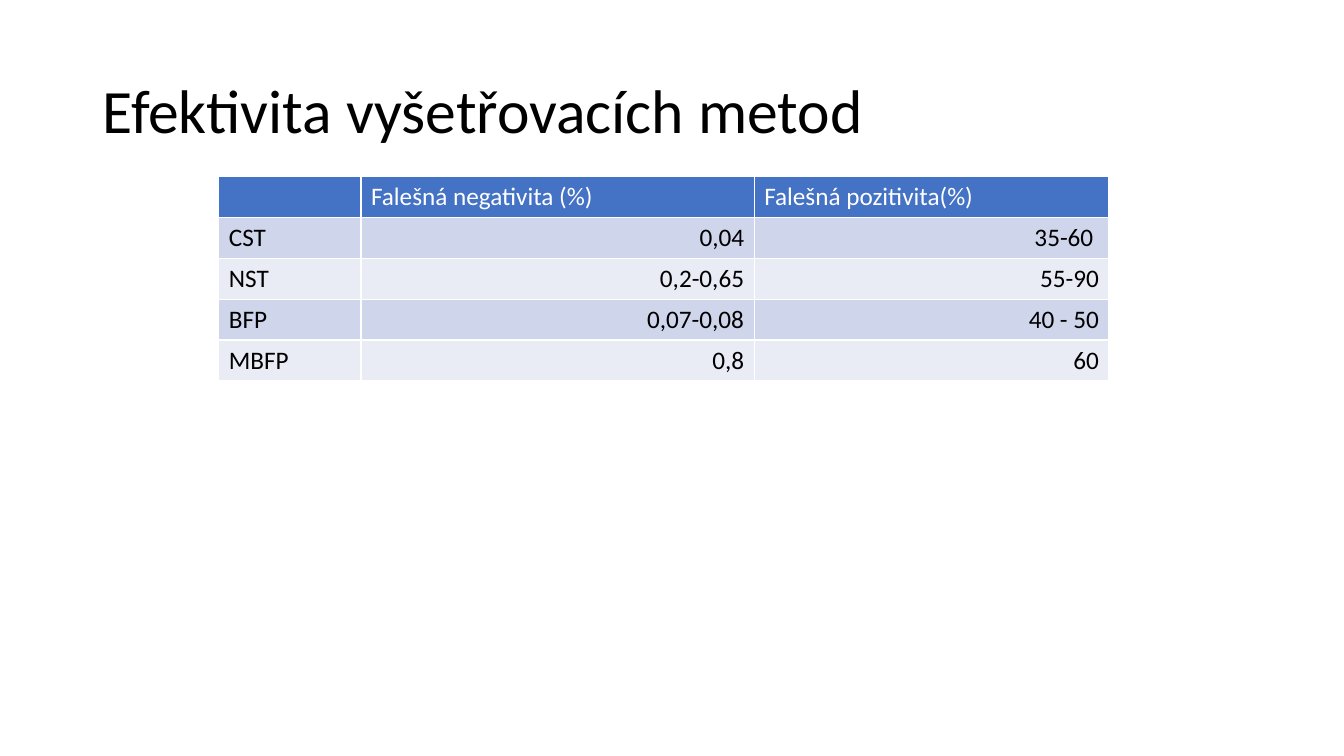
from dataclasses import dataclass

from pptx import Presentation
from pptx.dml.color import RGBColor
from pptx.enum.text import MSO_ANCHOR, PP_ALIGN
from pptx.util import Inches, Pt

COLORS = {
    "header": "4472C4",
    "odd": "CFD5EA",
    "even": "E9EBF5",
    "light": "FFFFFF",
    "dark": "000000",
}
FONT = "Calibri"
TITLE_ONLY = 5
COLUMN_WIDTHS = (1.41, 3.9, 3.52)
ROW_HEIGHT = 0.406


@dataclass
class Method:
    name: str
    false_negative: str
    false_positive: str


HEADER = Method("", "Falešná negativita (%)", "Falešná pozitivita(%)")
METHODS = [
    Method("CST", "0,04", "35-60 "),
    Method("NST", "0,2-0,65", "55-90"),
    Method("BFP", "0,07-0,08", "40 - 50"),
    Method("MBFP", "0,8", "60"),
]


def style_paragraph(para, size: int, color: str, align=PP_ALIGN.LEFT) -> None:
    para.alignment = align
    para.font.name = FONT
    para.font.size = Pt(size)
    para.font.bold = False
    para.font.color.rgb = RGBColor.from_string(COLORS[color])


def add_title(page, text: str) -> None:
    title = page.shapes.title
    title.left, title.top = Inches(0.92), Inches(0.4)
    title.width, title.height = Inches(11.5), Inches(1.45)
    title.text_frame.text = text
    title.text_frame.vertical_anchor = MSO_ANCHOR.MIDDLE
    para = title.text_frame.paragraphs[0]
    para.line_spacing = 0.9
    style_paragraph(para, 44, "dark")


def fill_row(table, row: int, method: Method) -> None:
    is_header = row == 0
    fill = "header" if is_header else ("odd" if row % 2 else "even")
    values = (method.name, method.false_negative, method.false_positive)
    for column, value in enumerate(values):
        cell = table.cell(row, column)
        cell.fill.solid()
        cell.fill.fore_color.rgb = RGBColor.from_string(COLORS[fill])
        cell.text = value
        is_number = column > 0 and not is_header
        style_paragraph(
            cell.text_frame.paragraphs[0],
            18,
            "light" if is_header else "dark",
            PP_ALIGN.RIGHT if is_number else PP_ALIGN.LEFT,
        )


def add_methods_table(page, methods: list[Method]) -> None:
    rows = [HEADER, *methods]
    table = page.shapes.add_table(
        len(rows), len(COLUMN_WIDTHS), Inches(2.17), Inches(1.75),
        Inches(sum(COLUMN_WIDTHS)), Inches(ROW_HEIGHT * len(rows)),
    ).table
    for column, width in zip(table.columns, COLUMN_WIDTHS):
        column.width = Inches(width)
    for row, method in enumerate(rows):
        fill_row(table, row, method)


def main() -> None:
    deck = Presentation()
    deck.slide_width, deck.slide_height = Inches(13.33), Inches(7.5)
    page = deck.slides.add_slide(deck.slide_layouts[TITLE_ONLY])
    add_title(page, "Efektivita vyšetřovacích metod")
    add_methods_table(page, METHODS)
    deck.save("out.pptx")


if __name__ == "__main__":
    main()
